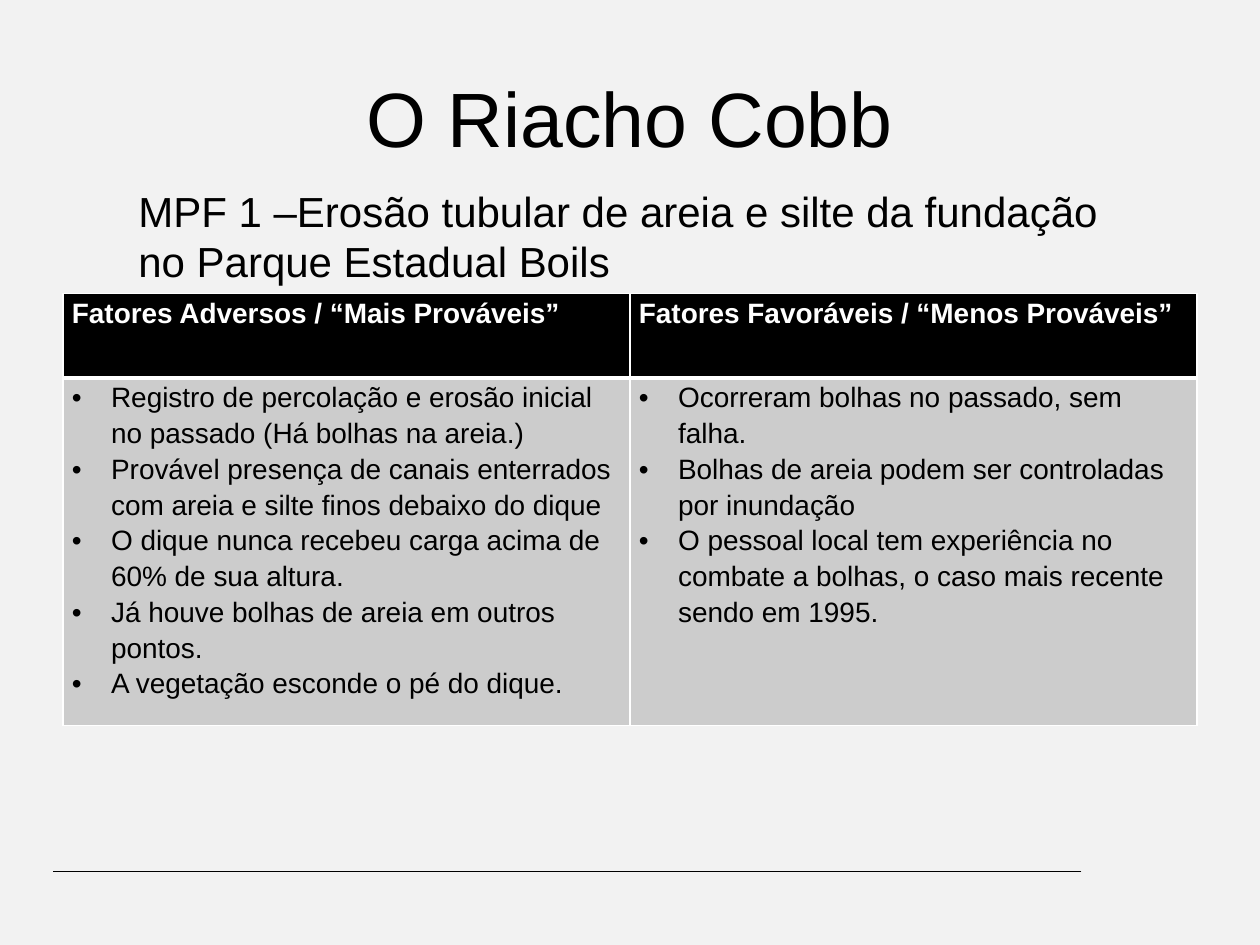
"""Build the Riacho Cobb slide with its table of adverse and favourable factors."""
import pptx
import pptx.dml.color
import pptx.enum.shapes
import pptx.enum.text
import pptx.oxml
import pptx.oxml.ns
import pptx.util
from pptx.util import Cm

TITLE = "O Riacho Cobb"
SUBTITLE = "MPF 1 –Erosão tubular de areia e silte da fundação no Parque Estadual Boils"
FACTORS = [
    ("Fatores Adversos / “Mais Prováveis”", [
        "Registro de percolação e erosão inicial no passado (Há bolhas na areia.)",
        "Provável presença de canais enterrados com areia e silte finos debaixo do dique",
        "O dique nunca recebeu carga acima de 60% de sua altura.",
        "Já houve bolhas de areia em outros pontos.",
        "A vegetação esconde o pé do dique.",
    ]),
    ("Fatores Favoráveis / “Menos Prováveis”", [
        "Ocorreram bolhas no passado, sem falha.",
        "Bolhas de areia podem ser controladas por inundação",
        "O pessoal local tem experiência no combate a bolhas, o caso mais recente sendo em 1995.",
    ]),
]
BLACK, WHITE, GRAY, PAPER = "000000", "FFFFFF", "CCCCCC", "F2F2F2"
COL_W, HEAD_H, BODY_H = 11.43, 1.7, 6.43
INDENT = Cm(0.79)


def rgb(value):
    return pptx.dml.color.RGBColor.from_string(value)


def xml(tag, attrs="", inner=""):
    ns = pptx.oxml.ns.nsdecls("a")
    return pptx.oxml.parse_xml(f"<a:{tag} {ns} {attrs}>{inner}</a:{tag}>")


def add_run(p, text, size, color=BLACK, bold=False):
    r = p.add_run()
    r.text = text
    r.font.name = "Arial"
    r.font.size = pptx.util.Pt(size)
    r.font.bold = bold
    r.font.color.rgb = rgb(color)


def add_text(s, box, text, size, anchor, align):
    tf = s.shapes.add_textbox(*map(Cm, box)).text_frame
    tf.word_wrap = True
    tf.vertical_anchor = anchor
    p = tf.paragraphs[0]
    p.alignment = align
    add_run(p, text, size)


def fill_cell(cell, lines, fill, color, bold, bullets, edges):
    cell.margin_left = cell.margin_right = Cm(0.18)
    cell.margin_top = cell.margin_bottom = 0
    cell.fill.solid()
    cell.fill.fore_color.rgb = rgb(fill)
    tcPr = cell._tc.get_or_add_tcPr()
    for i, (side, width) in enumerate(zip("LRTB", edges)):
        line = f'<a:solidFill><a:srgbClr val="{WHITE}"/></a:solidFill>'
        tcPr.insert(i, xml(f"ln{side}", f'w="{pptx.util.Pt(width)}"', line))
    tf = cell.text_frame
    for i, text in enumerate(lines):
        p = tf.add_paragraph() if i else tf.paragraphs[0]
        p.line_spacing = 1.15
        if bullets:
            pPr = p._p.get_or_add_pPr()
            pPr.set("marL", str(INDENT))
            pPr.set("indent", str(-INDENT))
            pPr.append(xml("buFont", 'typeface="Arial"'))
            pPr.append(xml("buChar", 'char="•"'))
        add_run(p, text, 16, color, bold)


def main():
    prs = pptx.Presentation()
    prs.slide_width, prs.slide_height = Cm(25.4), Cm(19.05)
    s = prs.slides.add_slide(prs.slide_layouts[6])
    s.background.fill.solid()
    s.background.fill.fore_color.rgb = rgb(PAPER)

    rule = s.shapes.add_connector(pptx.enum.shapes.MSO_CONNECTOR.STRAIGHT,
                                  Cm(21.8), Cm(17.57), Cm(1.06), Cm(17.57))
    rule.line.color.rgb = rgb(BLACK)
    rule.line.width = pptx.util.Pt(0.75)
    rule._element.spPr.append(xml("effectLst"))

    anchor, align = pptx.enum.text.MSO_ANCHOR, pptx.enum.text.PP_ALIGN
    add_text(s, (1.27, 0.76, 22.86, 3.18), TITLE, 44, anchor.MIDDLE, align.CENTER)

    sp = s.shapes.add_table(2, len(FACTORS), Cm(1.27), Cm(5.92),
                            Cm(COL_W * len(FACTORS)), Cm(HEAD_H + BODY_H))
    table = sp.table
    table.rows[0].height, table.rows[1].height = Cm(HEAD_H), Cm(BODY_H)
    for i, (heading, items) in enumerate(FACTORS):
        table.columns[i].width = Cm(COL_W)
        fill_cell(table.cell(0, i), [heading], BLACK, WHITE, True, False, (1, 1, 1, 3))
        fill_cell(table.cell(1, i), items, GRAY, BLACK, False, True, (1, 1, 3, 1))

    add_text(s, (2.54, 3.61, 20.52, 2.31), SUBTITLE, 24, anchor.TOP, align.LEFT)
    prs.save("out.pptx")


if __name__ == "__main__":
    main()
